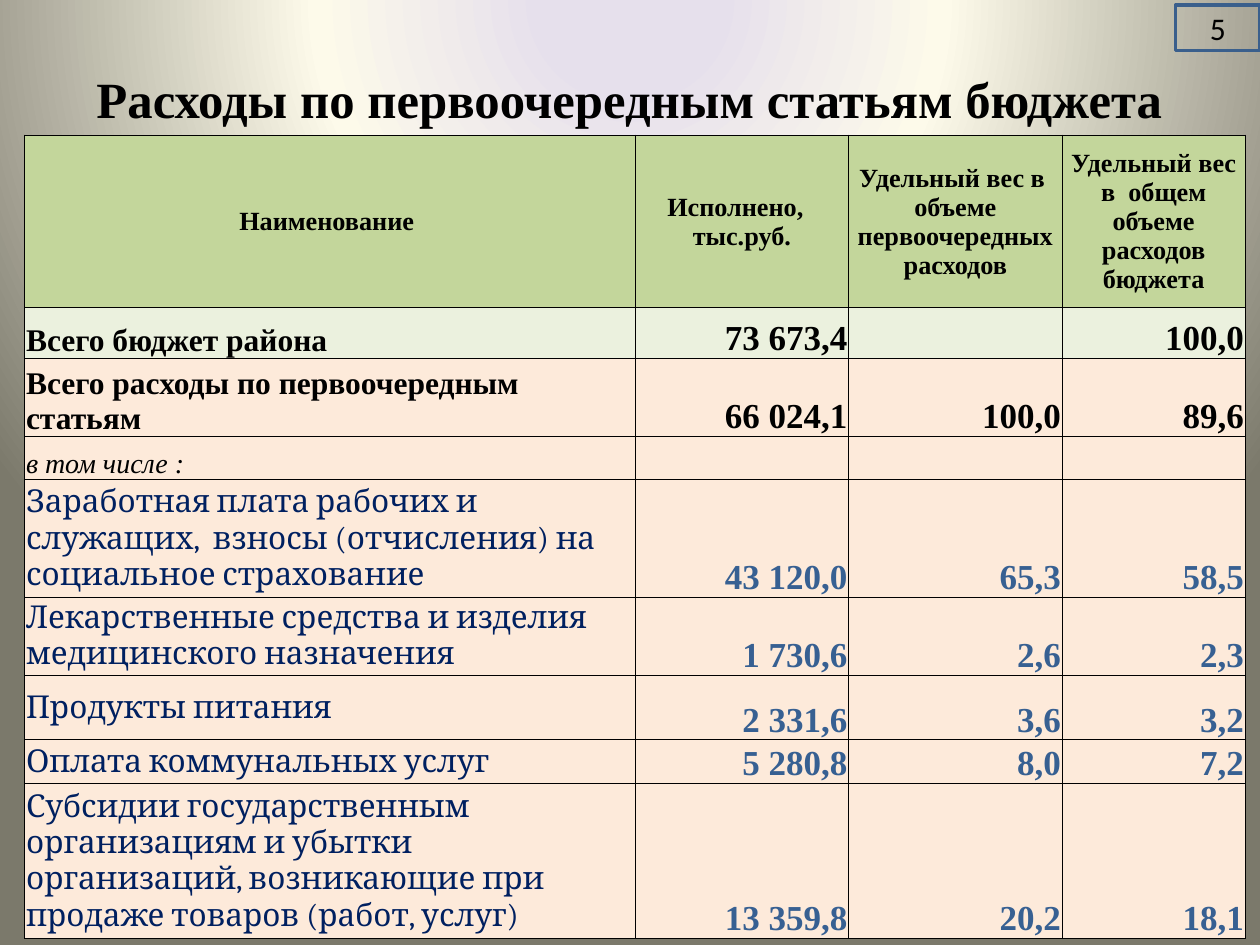
"""Build a slide with a table of priority budget expenditures."""
import pptx
import pptx.dml.color
import pptx.enum.shapes
import pptx.enum.text
import pptx.oxml
import pptx.oxml.ns
import pptx.util

Pt = pptx.util.Pt
RGBColor = pptx.dml.color.RGBColor
Align = pptx.enum.text.PP_ALIGN
Anchor = pptx.enum.text.MSO_ANCHOR

BLACK = RGBColor(0x00, 0x00, 0x00)
NAVY = RGBColor(0x00, 0x20, 0x60)
BLUE = RGBColor(0x37, 0x60, 0x92)
FRAME = RGBColor(0x3A, 0x5F, 0x8C)
GREEN = RGBColor(0xC3, 0xD6, 0x9B)
PALE_GREEN = RGBColor(0xEB, 0xF1, 0xDE)
PEACH = RGBColor(0xFD, 0xEA, 0xDA)
LAVENDER = RGBColor(0xE6, 0xE0, 0xEC)
CREAM = RGBColor(0xFD, 0xFA, 0xEA)
OLIVE = RGBColor(0x7B, 0x79, 0x6B)
SERIF = "Times New Roman"
NAMESPACE = pptx.oxml.ns.nsdecls("a")


def write(frame, text, size, color=BLACK, align=Align.LEFT, name=SERIF, bold=True, italic=False):
    for index, line in enumerate(text.split("\n")):
        paragraph = frame.add_paragraph() if index else frame.paragraphs[0]
        paragraph.alignment = align
        run = paragraph.add_run()
        run.text = line
        run.font.name = name
        run.font.size = Pt(size)
        run.font.bold = bold
        run.font.italic = italic
        run.font.color.rgb = color


def format_cell(cell, fill, anchor):
    cell.margin_left = cell.margin_right = cell.margin_top = Pt(0.7)
    cell.margin_bottom = 0
    cell.vertical_anchor = anchor
    properties = cell._tc.get_or_add_tcPr()
    for side in ("lnL", "lnR", "lnT", "lnB"):
        properties.append(pptx.oxml.parse_xml(
            f'<a:{side} {NAMESPACE} w="{Pt(0.5)}"><a:solidFill>'
            f'<a:srgbClr val="{BLACK}"/></a:solidFill></a:{side}>'))
    cell.fill.solid()
    cell.fill.fore_color.rgb = fill


presentation = pptx.Presentation()
presentation.slide_width = Pt(720)
presentation.slide_height = Pt(540)
slide = presentation.slides.add_slide(presentation.slide_layouts[6])

slide.background.fill.gradient()
gradient = slide.element.find(".//" + pptx.oxml.ns.qn("a:gradFill"))
stops = "".join(
    f'<a:gs pos="{percent * 1000}"><a:srgbClr val="{color}"/></a:gs>'
    for percent, color in ((11, LAVENDER), (40, CREAM), (100, OLIVE)))
gradient.getparent().replace(gradient, pptx.oxml.parse_xml(
    f'<a:gradFill {NAMESPACE} rotWithShape="1"><a:gsLst>{stops}</a:gsLst><a:path path="circle">'
    '<a:fillToRect l="50000" t="-80000" r="50000" b="180000"/></a:path></a:gradFill>'))

title = slide.shapes.add_textbox(0, Pt(9.4), Pt(720), Pt(67.6))
title.text_frame.word_wrap = True
title.text_frame.vertical_anchor = Anchor.BOTTOM
write(title.text_frame, "Расходы по первоочередным статьям бюджета", 29, align=Align.CENTER)

headings = [
    "Наименование ",
    "Исполнено,  \nтыс.руб.",
    "Удельный вес в  объеме первоочередных расходов",
    "Удельный вес в  общем объеме расходов бюджета",
]
totals = [
    ("Всего бюджет района", "73 673,4", "", "100,0"),
    ("Всего расходы по первоочередным статьям", "66 024,1", "100,0", "89,6"),
    ("в том числе :", "", "", ""),
]
items = [
    ("Заработная плата рабочих и служащих,  взносы (отчисления) на социальное страхование",
     "43 120,0", "65,3", "58,5"),
    ("Лекарственные средства и изделия медицинского назначения", "1 730,6", "2,6", "2,3"),
    ("Продукты питания", "2 331,6", "3,6", "3,2"),
    ("Оплата коммунальных услуг", "5 280,8", "8,0", "7,2"),
    ("Субсидии государственным организациям и убытки организаций, возникающие при "
     "продаже товаров (работ, услуг)", "13 359,8", "20,2", "18,1"),
]
rows = [headings] + totals + items
widths = [348.8, 122, 122, 104.6]
heights = [98.4, 29, 44.6, 25, 67, 44.6, 37, 25, 88.6]

table = slide.shapes.add_table(
    len(rows), len(widths), Pt(14.2), Pt(77.2), Pt(sum(widths)), Pt(sum(heights))).table
table.first_row = table.horz_banding = False
for column, width in zip(table.columns, widths):
    column.width = Pt(width)
for row, height in zip(table.rows, heights):
    row.height = Pt(height)

for row_index, values in enumerate(rows):
    fill = {0: GREEN, 1: PALE_GREEN}.get(row_index, PEACH)
    is_item = row_index > len(totals)
    for column_index, text in enumerate(values):
        cell = table.cell(row_index, column_index)
        centred = row_index == 0 or (is_item and column_index == 0)
        format_cell(cell, fill, Anchor.MIDDLE if centred else Anchor.BOTTOM)
        if not text:
            continue
        if row_index == 0:
            write(cell.text_frame, text, 15, align=Align.CENTER)
        elif column_index:
            write(cell.text_frame, text, 20, BLUE if is_item else BLACK, Align.RIGHT)
        elif is_item:
            write(cell.text_frame, text, 18, NAVY, name="Cambria", bold=False)
        elif row_index == len(totals):
            write(cell.text_frame, text, 16, bold=False, italic=True)
        else:
            write(cell.text_frame, text, 18)

page_number = slide.shapes.add_shape(
    pptx.enum.shapes.MSO_SHAPE.RECTANGLE, Pt(671.8), Pt(3), Pt(48.2), Pt(25.8))
page_number.shadow.inherit = False
page_number.fill.background()
page_number.line.color.rgb = FRAME
page_number.line.width = Pt(2)
page_number.text_frame.vertical_anchor = Anchor.MIDDLE
write(page_number.text_frame, "5", 18, align=Align.CENTER, name="Calibri", bold=False)

presentation.save("out.pptx")
